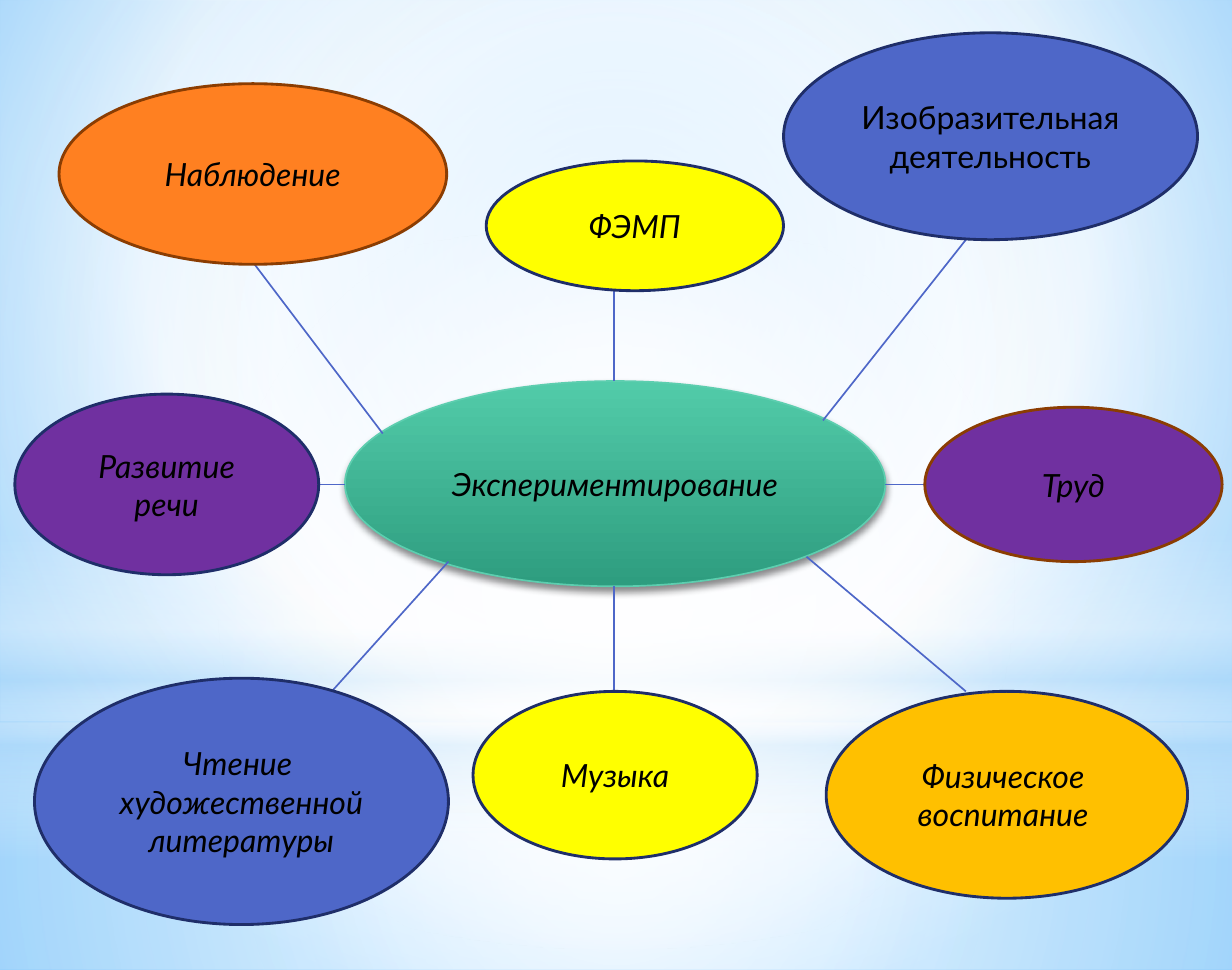
from lxml import etree
from pptx import Presentation
from pptx.dml.color import RGBColor
from pptx.enum.shapes import MSO_CONNECTOR as Connector, MSO_SHAPE as Shape
from pptx.enum.text import MSO_ANCHOR as Anchor, PP_ALIGN as Align
from pptx.oxml import parse_xml
from pptx.oxml.ns import nsdecls, qn
from pptx.util import Inches, Pt

WIDTH = 7.5
HEIGHT = WIDTH * 63 / 80
HORIZON = 4.4
NAVY, BROWN, BLUE, YELLOW, PURPLE = "1F2E69", "8B3D02", "4E67C8", "FFFF00", "7030A0"

BACKGROUND = [(0, "9ED5FF", 100), (60, "FFFFFF", 100), (100, "5BB9FF", 100)]
BACKGROUND_FOCUS = (20, 10, 20, 60)
CENTER_FOCUS = (50, 50, 50, 50)
BACKDROPS = [
    (Shape.RECTANGLE, (0, HORIZON, WIDTH, HEIGHT - HORIZON), CENTER_FOCUS,
     [(0, "FFFFFF", 91), (37, "FFFFFF", 76), (100, "B4DCFA", 79)]),
    (Shape.RECTANGLE, (0, 0, WIDTH, HORIZON), CENTER_FOCUS,
     [(0, "FFFFFF", 89), (48, "FFFFFF", 62), (100, "B4DCFA", 79)]),
    (Shape.RECTANGLE, (0, 3.25, WIDTH, 1.97), None,
     [(0, "FFFFFF", 0), (29, "FFFFFF", 30), (45, "B4DCFA", 40),
      (55, "FFFFFF", 26), (65, "B4DCFA", 60), (100, "FFFFFF", 0)]),
    (Shape.OVAL, (0, 1.38, WIDTH, 4.4), CENTER_FOCUS,
     [(0, "FFFFFF", 100), (56, "FFFFFF", 0)]),
]

HUB_TEXT = "Экспериментирование"
HUB_BOX = (2.1, 2.32, 3.29, 1.25)
HUB_STOPS = [(0, "52CBA9", 100), (100, "2E9D7F", 100)]

TOPICS = [
    (["Наблюдение"], (0.36, 0.51, 2.36, 1.1), "FF8021", BROWN, True,
     (2.33, 2.64), (1.55, 1.61)),
    (["Труд"], (5.63, 2.48, 1.81, 0.94), PURPLE, BROWN, True,
     (5.39, 2.95), (5.63, 2.95)),
    (["Развитие речи"], (0.09, 2.4, 1.85, 1.1), PURPLE, NAVY, True,
     (1.94, 2.95), (2.1, 2.95)),
    (["Изобразительная", "деятельность"], (4.77, 0.2, 2.52, 1.26), BLUE, NAVY, False,
     (5.01, 2.56), (5.88, 1.46)),
    (["ФЭМП"], (2.96, 0.98, 1.81, 0.79), YELLOW, NAVY, True,
     (3.74, 2.32), (3.74, 1.77)),
    (["Чтение ", "художественной", "литературы"], (0.21, 4.13, 2.52, 1.5), BLUE, NAVY, True,
     (2.73, 3.42), (2.02, 4.21)),
    (["Музыка"], (2.88, 4.21, 1.73, 1.02), YELLOW, NAVY, True,
     (3.74, 3.57), (3.74, 4.21)),
    (["Физическое ", "воспитание "], (5.03, 4.21, 2.2, 1.26), "FFC000", NAVY, True,
     (4.91, 3.39), (5.88, 4.21)),
]


def color(value):
    return RGBColor.from_string(value)


def set_gradient(fill, element, stops, focus=None):
    fill.gradient()
    stop_list = "".join(
        f'<a:gs pos="{position * 1000}"><a:srgbClr val="{value}">'
        f'<a:alpha val="{alpha * 1000}"/></a:srgbClr></a:gs>'
        for position, value, alpha in stops)
    if focus:
        left, top, right, bottom = (side * 1000 for side in focus)
        direction = (f'<a:path path="circle"><a:fillToRect l="{left}" t="{top}" '
                     f'r="{right}" b="{bottom}"/></a:path>')
    else:
        direction = '<a:lin ang="5400000" scaled="0"/>'
    gradient = parse_xml(f'<a:gradFill {nsdecls("a")} rotWithShape="1">'
                         f'<a:gsLst>{stop_list}</a:gsLst>{direction}</a:gradFill>')
    current = next(element.iter(qn("a:gradFill")))
    current.getparent().replace(current, gradient)


def add_shape(slide, kind, box):
    shape = slide.shapes.add_shape(kind, *map(Inches, box))
    shape.shadow.inherit = False
    shape.line.fill.background()
    return shape


def set_outline(shape, value, width):
    shape.line.color.rgb = color(value)
    shape.line.width = Pt(width)


def write_text(shape, lines, size=14, font="Lato", italic=True, fill="000000"):
    frame = shape.text_frame
    frame.word_wrap = True
    frame.vertical_anchor = Anchor.MIDDLE
    for index, line in enumerate(lines):
        paragraph = frame.add_paragraph() if index else frame.paragraphs[0]
        paragraph.alignment = Align.CENTER
        run = paragraph.add_run()
        run.text = line
        run.font.size = Pt(size)
        run.font.name = font
        run.font.italic = italic
        run.font.color.rgb = color(fill)


def add_hub(slide):
    hub = add_shape(slide, Shape.OVAL, HUB_BOX)
    set_gradient(hub.fill, hub.element, HUB_STOPS)
    set_outline(hub, "5DCEAF", 0.75)
    effects = next(hub.element.iter(qn("a:effectLst")))
    effects.append(parse_xml(
        f'<a:outerShdw {nsdecls("a")} blurRad="{Pt(3.1)}" dist="{Pt(1.8)}" '
        'dir="5400000" rotWithShape="0"><a:srgbClr val="000000">'
        '<a:alpha val="45000"/></a:srgbClr></a:outerShdw>'))
    write_text(hub, [HUB_TEXT])


def add_spoke(slide, start, end):
    spoke = slide.shapes.add_connector(Connector.STRAIGHT, *map(Inches, start + end))
    set_outline(spoke, BLUE, 0.75)
    etree.SubElement(spoke.element.spPr, qn("a:effectLst"))


def main():
    presentation = Presentation()
    presentation.slide_width = Inches(WIDTH)
    presentation.slide_height = Inches(HEIGHT)
    slide = presentation.slides.add_slide(presentation.slide_layouts[6])
    set_gradient(slide.background.fill, slide.element, BACKGROUND, BACKGROUND_FOCUS)
    for kind, box, focus, stops in BACKDROPS:
        backdrop = add_shape(slide, kind, box)
        set_gradient(backdrop.fill, backdrop.element, stops, focus)
    add_hub(slide)
    for lines, box, fill, outline, italic, start, end in TOPICS:
        add_spoke(slide, start, end)
        topic = add_shape(slide, Shape.OVAL, box)
        topic.fill.solid()
        topic.fill.fore_color.rgb = color(fill)
        set_outline(topic, outline, 1.25)
        write_text(topic, lines, italic=italic)
    presentation.save("out.pptx")


if __name__ == "__main__":
    main()
